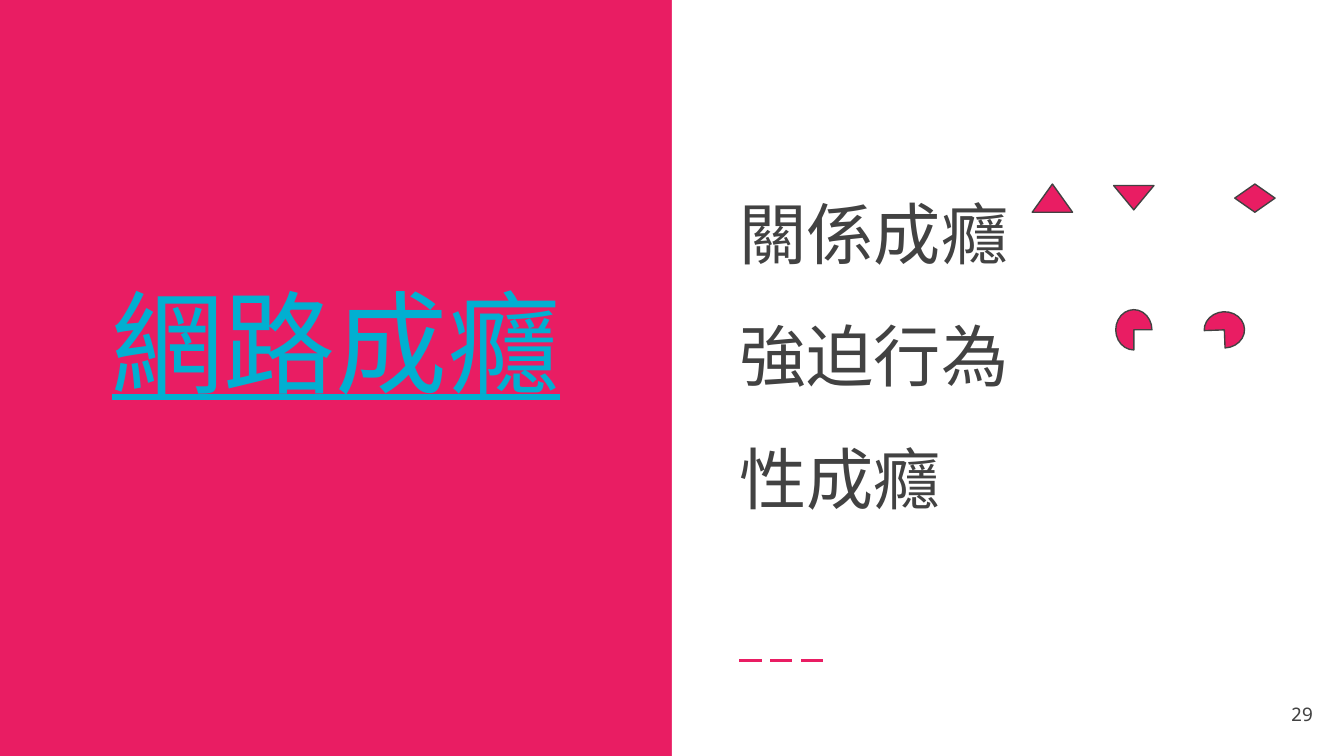
from lxml.etree import SubElement
from pptx import Presentation
from pptx.dml.color import RGBColor
from pptx.enum.dml import MSO_LINE
from pptx.enum.shapes import MSO_CONNECTOR, MSO_SHAPE as SHAPE
from pptx.enum.text import MSO_ANCHOR as ANCHOR, MSO_AUTO_SIZE, PP_ALIGN as ALIGN
from pptx.oxml.ns import qn
from pptx.util import Pt

PINK, WHITE, GREY, CYAN = "E91D63", "FFFFFF", "424242", "01AFD1"
TITLE_FONT, BODY_FONT = "Roboto Condensed", "Noto Sans Mono"
INSET = 7.2


def rgb(color):
    return RGBColor.from_string(color)


def place(sp, left, top, width, height):
    sp.left, sp.top, sp.width, sp.height = map(Pt, (left, top, width, height))


def set_frame(sp, anchor):
    tf = sp.text_frame
    tf.word_wrap = True
    tf.auto_size = MSO_AUTO_SIZE.NONE
    tf.vertical_anchor = anchor
    tf.margin_left = tf.margin_top = tf.margin_right = tf.margin_bottom = Pt(INSET)
    return tf


def add_run(p, text, size, font, color, underline=False):
    r = p.add_run()
    r.text = text
    r.font.size = Pt(size)
    r.font.name = font
    r.font.color.rgb = rgb(color)
    r.font.bold = False
    if underline:
        r.font.underline = True
    SubElement(r.font._element, qn("a:ea")).set("typeface", font)


def fill_title(sp, text):
    place(sp, 21, 85, 318, 141)
    p = set_frame(sp, ANCHOR.BOTTOM).paragraphs[0]
    p.alignment = ALIGN.CENTER
    add_run(p, text, 60, TITLE_FONT, CYAN, underline=True)


def fill_body(sp, lines):
    place(sp, 389, 27.4, 302.4, 319)
    tf = set_frame(sp, ANCHOR.MIDDLE)
    for i, text in enumerate(lines):
        p = tf.add_paragraph() if i else tf.paragraphs[0]
        pPr = p._p.get_or_add_pPr()
        pPr.set("marL", "0")
        pPr.set("indent", "0")
        SubElement(pPr, qn("a:buNone"))
        p.line_spacing = 1.15
        p.space_before = Pt(16 if i else 0)
        p.space_after = Pt(16 if i == len(lines) - 1 else 0)
        add_run(p, text, 36, BODY_FONT, GREY)


def add_panel(shapes):
    """Add the white right half behind the placeholders."""
    sp = shapes.add_shape(SHAPE.RECTANGLE, Pt(360), Pt(0), Pt(360), Pt(405))
    sp.shadow.inherit = False
    sp.fill.solid()
    sp.fill.fore_color.rgb = rgb(WHITE)
    sp.line.fill.background()
    shapes._spTree.insert(2, sp._element)


def add_dashes(shapes):
    line = shapes.add_connector(MSO_CONNECTOR.STRAIGHT, Pt(396), Pt(354), Pt(441), Pt(354))
    line.line.color.rgb = rgb(PINK)
    line.line.width = Pt(1.5)
    line.line.dash_style = MSO_LINE.LONG_DASH
    SubElement(line._element.spPr, qn("a:effectLst"))


def add_page_number(shapes, text):
    sp = shapes.add_textbox(Pt(667.4), Pt(367.2), Pt(43.2), Pt(31))
    p = set_frame(sp, ANCHOR.MIDDLE).paragraphs[0]
    p.alignment = ALIGN.RIGHT
    add_run(p, text, 10, BODY_FONT, GREY)


def add_symbol(shapes, kind, left, top, height, rotation=0):
    sp = shapes.add_shape(kind, Pt(left), Pt(top), Pt(21.6), Pt(height))
    sp.shadow.inherit = False
    sp.rotation = rotation
    sp.fill.solid()
    sp.fill.fore_color.rgb = rgb(PINK)
    sp.line.color.rgb = rgb(GREY)
    sp.line.width = Pt(0.75)
    return sp


def add_pie(shapes, left, rotation):
    """Add a three-quarter disc."""
    sp = add_symbol(shapes, SHAPE.PIE, left, 167, 19.4, rotation)
    sp.adjustments[0] = 0
    sp.adjustments[1] = 162


def main():
    prs = Presentation()
    prs.slide_width, prs.slide_height = Pt(720), Pt(405)
    s = prs.slides.add_slide(prs.slide_layouts[1])
    s.background.fill.solid()
    s.background.fill.fore_color.rgb = rgb(PINK)
    shapes = s.shapes

    add_panel(shapes)
    add_dashes(shapes)
    fill_title(shapes.title, "網路成癮")
    fill_body(s.placeholders[1], ["關係成癮", "強迫行為", "性成癮"])
    add_page_number(shapes, "29")

    add_symbol(shapes, SHAPE.FLOWCHART_EXTRACT, 553, 98.6, 15.1)
    add_symbol(shapes, SHAPE.FLOWCHART_MERGE, 596.6, 99.4, 13)
    add_symbol(shapes, SHAPE.DIAMOND, 661.5, 98.6, 15.1)
    add_pie(shapes, 596.6, 90)
    add_pie(shapes, 645.1, 177.9)

    prs.save("out.pptx")


if __name__ == "__main__":
    main()
